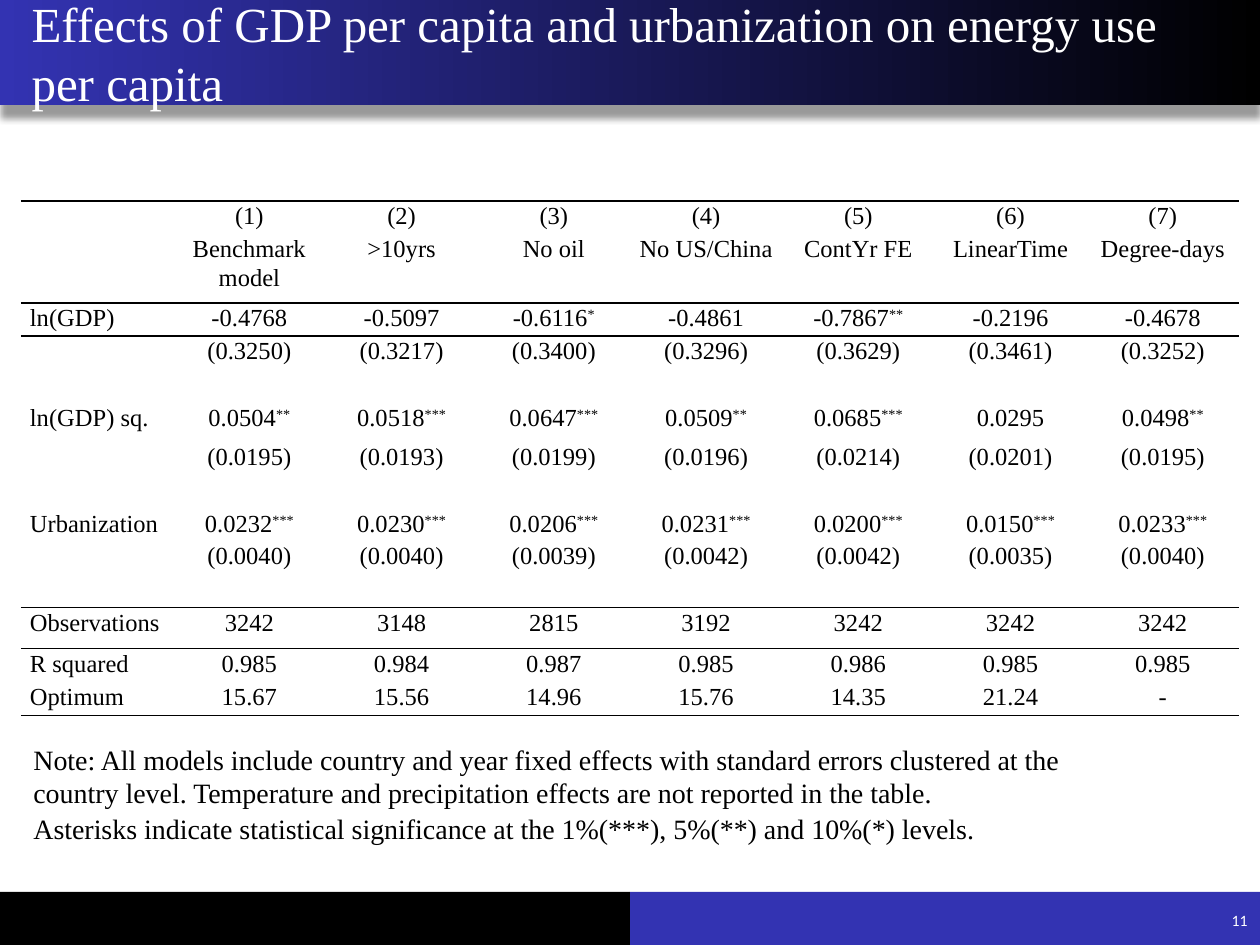
import lxml.etree
import pptx
import pptx.util
import pptx.dml.color
import pptx.enum.shapes
import pptx.enum.text
import pptx.oxml.ns

SCALE = 914400 / 126
HUES = {"black": "000000", "blue": "3333B2", "white": "FFFFFF"}
SERIF = "Times New Roman"
ALIGN = pptx.enum.text.PP_ALIGN
MIDDLE = pptx.enum.text.MSO_ANCHOR.MIDDLE
RECT = pptx.enum.shapes.MSO_SHAPE.RECTANGLE
qn = pptx.oxml.ns.qn


def px(*nums):
    return [pptx.util.Emu(round(n * SCALE)) for n in nums]


def write(para, text, size, hue="black", face=SERIF):
    run = para.add_run()
    run.text = text
    run.font.size = pptx.util.Pt(size)
    run.font.name = face
    run.font.color.rgb = pptx.dml.color.RGBColor.from_string(HUES[hue])
    return run


deck = pptx.Presentation()
deck.slide_width, deck.slide_height = px(1260, 945)
slide = deck.slides.add_slide(deck.slide_layouts[5])
shapes = slide.shapes

# Header and footer bars
bars = []
for box, hue in [((0, 0, 1260, 105), "black"),
                 ((630, 892, 630, 53), "blue"),
                 ((0, 892, 630, 53), "black")]:
    bar = shapes.add_shape(RECT, *px(*box))
    bar.shadow.inherit = False
    bar.fill.solid()
    bar.fill.fore_color.rgb = pptx.dml.color.RGBColor.from_string(HUES[hue])
    bar.line.fill.background()
    bars.append(bar)

head = bars[0]
head.fill.gradient()
head.fill.gradient_angle = 180
for stop, spot, hue in zip(head.fill.gradient_stops, (0, 1), ("black", "blue")):
    stop.position = spot
    stop.color.rgb = pptx.dml.color.RGBColor.from_string(HUES[hue])
glow = lxml.etree.SubElement(
    head._element.spPr.find(qn("a:effectLst")), qn("a:outerShdw"),
    blurRad="50800", dist="88900", dir="5400000", algn="t", rotWithShape="0")
tint = lxml.etree.SubElement(glow, qn("a:srgbClr"), val=HUES["black"])
lxml.etree.SubElement(tint, qn("a:alpha"), val="40000")

# Title, in front of the header bar
title = shapes.title
title.left, title.top, title.width, title.height = px(0, 0, 1229, 105)
shapes._spTree.append(title._element)
frame = title.text_frame
frame.word_wrap = True
frame.auto_size = pptx.enum.text.MSO_AUTO_SIZE.NONE
frame.vertical_anchor = MIDDLE
para = frame.paragraphs[0]
para.alignment = ALIGN.LEFT
para._p.get_or_add_pPr().set("marL", str(px(19)[0]))
write(para, "Effects of GDP per capita and urbanization on energy use per capita",
      28, "white")

# Slide number
frame = shapes.add_textbox(*px(1113, 895, 147, 50)).text_frame
frame.word_wrap = True
frame.vertical_anchor = MIDDLE
para = frame.paragraphs[0]
para.alignment = ALIGN.RIGHT
write(para, "11", 9, "white", "Calibri")

# Regression table: (height in px, cells)
rows = [
    (33, "|(1)|(2)|(3)|(4)|(5)|(6)|(7)"),
    (69, "|Benchmark model|>10yrs|No oil|No US/China|ContYr FE|LinearTime|Degree-days"),
    (33, "ln(GDP)|-0.4768|-0.5097|-0.6116*|-0.4861|-0.7867**|-0.2196|-0.4678"),
    (34, "|(0.3250)|(0.3217)|(0.3400)|(0.3296)|(0.3629)|(0.3461)|(0.3252)"),
    (33, "|||||||"),
    (39, "ln(GDP) sq.|0.0504**|0.0518***|0.0647***|0.0509**|0.0685***|0.0295|0.0498**"),
    (34, "|(0.0195)|(0.0193)|(0.0199)|(0.0196)|(0.0214)|(0.0201)|(0.0195)"),
    (33, "|||||||"),
    (29, "Urbanization|0.0232***|0.0230***|0.0206***|0.0231***|0.0200***|0.0150***|0.0233***"),
    (34, "|(0.0040)|(0.0040)|(0.0039)|(0.0042)|(0.0042)|(0.0035)|(0.0040)"),
    (33, "|||||||"),
    (41, "Observations|3242|3148|2815|3192|3242|3242|3242"),
    (34, "R squared|0.985|0.984|0.987|0.985|0.986|0.985|0.985"),
    (33, "Optimum|15.67|15.56|14.96|15.76|14.35|21.24|-"),
]
rules = {0: ["a:lnT"], 1: ["a:lnB"], 2: ["a:lnT"], 10: ["a:lnB"],
         11: ["a:lnT"], 13: ["a:lnB"]}
tall = sum(high for high, _ in rows)
table = shapes.add_table(len(rows), 8, *px(21, 201, 1218, tall)).table
table.first_row = table.horz_banding = False
table._tbl.tblPr[0].text = "{2D5ABB26-0587-4C30-8999-92F81FD0307C}"  # no style, no grid

for r, (high, line) in enumerate(rows):
    table.rows[r].height = px(high)[0]
    for c, text in enumerate(line.split("|")):
        cell = table.cell(r, c)
        cell.margin_left, cell.margin_right = px(9, 9)
        cell.margin_top = cell.margin_bottom = 0
        para = cell.text_frame.paragraphs[0]
        para.alignment = ALIGN.CENTER if c else ALIGN.LEFT
        para.line_spacing = 1.07
        value = text.rstrip("*")
        stars = text[len(value):]
        if value:
            write(para, value, 14)
        else:
            lxml.etree.SubElement(para._p, qn("a:endParaRPr"), sz="1200")
        if stars:
            run = write(para, stars, 14)
            run._r.get_or_add_rPr().set("baseline", "30000")
        for side in rules.get(r, []):
            edge = lxml.etree.SubElement(cell._tc.get_or_add_tcPr(), qn(side), w="12700")
            fill = lxml.etree.SubElement(edge, qn("a:solidFill"))
            lxml.etree.SubElement(fill, qn("a:srgbClr"), val=HUES["black"])
        cell.fill.background()

# Note below the table
frame = shapes.add_textbox(*px(21, 736, 1125, 117)).text_frame
frame.word_wrap = True
write(frame.paragraphs[0],
      "Note: All models include country and year fixed effects with standard errors "
      "clustered at the country level. Temperature and precipitation effects are not "
      "reported in the table.", 16)
para = frame.add_paragraph()
para.line_spacing = 1.07
para.space_after = pptx.util.Pt(8)
write(para, "Asterisks indicate statistical significance at the 1%(***), 5%(**) "
      "and 10%(*) levels.", 16)

deck.save("out.pptx")
